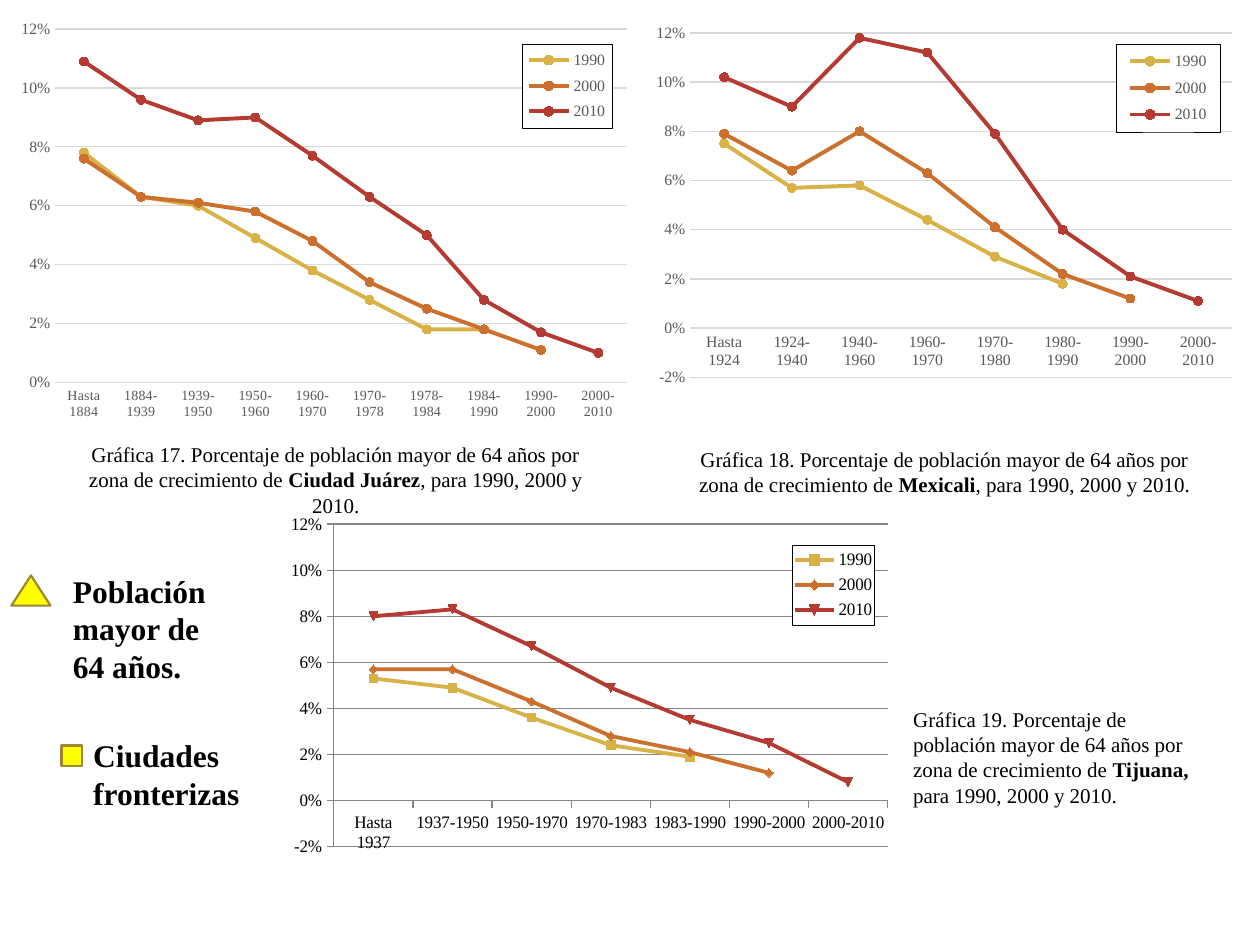
from pptx import Presentation
from pptx.chart.data import CategoryChartData
from pptx.dml.color import RGBColor
from pptx.enum.chart import XL_CHART_TYPE, XL_LEGEND_POSITION, XL_MARKER_STYLE, XL_TICK_MARK
from pptx.enum.shapes import MSO_SHAPE
from pptx.enum.text import MSO_AUTO_SIZE, PP_ALIGN
from pptx.oxml import parse_xml
from pptx.oxml.ns import nsdecls, qn
from pptx.util import Cm, Pt

LINE_MARKERS = XL_CHART_TYPE.LINE_MARKERS
LEGEND_RIGHT = XL_LEGEND_POSITION.RIGHT
CIRCLE = XL_MARKER_STYLE.CIRCLE
NO_TICK, OUTER_TICK = XL_TICK_MARK.NONE, XL_TICK_MARK.OUTSIDE
TRIANGLE, SQUARE = MSO_SHAPE.ISOSCELES_TRIANGLE, MSO_SHAPE.RECTANGLE
CENTER, LEFT = PP_ALIGN.CENTER, PP_ALIGN.LEFT
GROW = MSO_AUTO_SIZE.SHAPE_TO_FIT_TEXT

BLACK = RGBColor(0x00, 0x00, 0x00)
YELLOW = RGBColor(0xFF, 0xFF, 0x00)
BRONZE = RGBColor(0xA1, 0x84, 0x35)
LABEL_GRAY = RGBColor(0x59, 0x59, 0x59)
PALE_GRAY = RGBColor(0xD9, 0xD9, 0xD9)
MID_GRAY = RGBColor(0x86, 0x86, 0x86)
CENSUS_COLORS = {
    "1990": RGBColor(0xD9, 0xB2, 0x47),
    "2000": RGBColor(0xCC, 0x70, 0x2D),
    "2010": RGBColor(0xB5, 0x3A, 0x31),
}
FONT = "Times New Roman"

MODERN = {"label": LABEL_GRAY, "grid": PALE_GRAY, "tick": NO_TICK,
          "size": 9, "circles": True}
CLASSIC = {"label": BLACK, "grid": MID_GRAY, "tick": OUTER_TICK,
           "size": 10, "circles": False}

JUAREZ = {
    "box": (0.23, 0.23, 12.65, 8.53), "style": MODERN, "category_size": 8, "minimum": 0,
    "plot": (0.07, 0.042, 0.911, 0.835), "legend": (0.814, 0.077, 0.143, 0.198),
    "zones": ["Hasta 1884", "1884-1939", "1939-1950", "1950-1960", "1960-1970",
              "1970-1978", "1978-1984", "1984-1990", "1990-2000", "2000-2010"],
    "shares": [
        (0.078, 0.063, 0.06, 0.049, 0.038, 0.028, 0.018, 0.018, None, None),
        (0.076, 0.063, 0.061, 0.058, 0.048, 0.034, 0.025, 0.018, 0.011, None),
        (0.109, 0.096, 0.089, 0.09, 0.077, 0.063, 0.05, 0.028, 0.017, 0.01)],
}
MEXICALI = {
    "box": (12.88, 0.23, 12.34, 8.53), "style": MODERN, "category_size": 9, "minimum": -0.02,
    "plot": (0.084, 0.051, 0.885, 0.814), "legend": (0.78, 0.077, 0.17, 0.208),
    "zones": ["Hasta 1924", "1924-1940", "1940-1960", "1960-1970",
              "1970-1980", "1980-1990", "1990-2000", "2000-2010"],
    "shares": [
        (0.075, 0.057, 0.058, 0.044, 0.029, 0.018, None, None),
        (0.079, 0.064, 0.08, 0.063, 0.041, 0.022, 0.012, None),
        (0.102, 0.09, 0.118, 0.112, 0.079, 0.04, 0.021, 0.011)],
}
TIJUANA = {
    "box": (5.87, 10.31, 12.29, 7.34), "style": CLASSIC, "category_size": 10, "minimum": -0.02,
    "plot": (0.047, 0.035, 0.931, 0.886), "legend": (0.818, 0.092, 0.138, 0.22),
    "zones": ["Hasta 1937", "1937-1950", "1950-1970", "1970-1983",
              "1983-1990", "1990-2000", "2000-2010"],
    "shares": [
        (0.053, 0.049, 0.036, 0.024, 0.019, None, None),
        (0.057, 0.057, 0.043, 0.028, 0.021, 0.012, None),
        (0.08, 0.083, 0.067, 0.049, 0.035, 0.025, 0.008)],
}


def apply_format(target, values):
    for attribute, value in values.items():
        setattr(target, attribute, value)


def format_font(font, size, color, bold=False):
    apply_format(font, {"name": FONT, "size": Pt(size), "bold": bold})
    font.color.rgb = color


def format_line(line, color, width):
    line.color.rgb = color
    line.width = Pt(width)


def manual_layout(box, inner=False):
    target = '<c:layoutTarget val="inner"/>' if inner else ""
    sizes = "".join(f'<c:{tag} val="{value}"/>' for tag, value in zip("xywh", box))
    return parse_xml(
        f'<c:layout {nsdecls("c")}><c:manualLayout>{target}'
        f'<c:xMode val="edge"/><c:yMode val="edge"/>{sizes}</c:manualLayout></c:layout>')


def white_panel(outline):
    return parse_xml(
        f'<c:spPr {nsdecls("c", "a")}><a:solidFill><a:srgbClr val="FFFFFF"/></a:solidFill>'
        f'<a:ln w="3175">{outline}</a:ln></c:spPr>')


def format_axis(axis, style, size):
    apply_format(axis, {"major_tick_mark": style["tick"], "minor_tick_mark": NO_TICK})
    format_font(axis.tick_labels.font, size, style["label"])
    format_line(axis.format.line, style["grid"], 0.75)


def format_legend(chart, box, style):
    chart.has_legend = True
    legend = chart.legend
    apply_format(legend, {"position": LEGEND_RIGHT, "include_in_layout": True})
    format_font(legend.font, style["size"], style["label"])
    element = legend._element
    for layout in element.findall(qn("c:layout")):
        element.remove(layout)
    element.find(qn("c:legendPos")).addnext(manual_layout(box))
    black_outline = '<a:solidFill><a:srgbClr val="000000"/></a:solidFill>'
    element.find(qn("c:txPr")).addprevious(white_panel(black_outline))


def format_series(series, style):
    color = CENSUS_COLORS[series.name]
    series.smooth = False
    format_line(series.format.line, color, 2.25)
    if style["circles"]:
        apply_format(series.marker, {"style": CIRCLE, "size": 5})
        series.marker.format.fill.solid()
        series.marker.format.fill.fore_color.rgb = color
        format_line(series.marker.format.line, color, 0.75)


def add_city_chart(slide, city):
    style = city["style"]
    data = CategoryChartData(number_format="0%")
    data.categories = city["zones"]
    for census, shares in zip(CENSUS_COLORS, city["shares"]):
        data.add_series(census, shares)
    chart = slide.shapes.add_chart(LINE_MARKERS, *map(Cm, city["box"]), data).chart
    chart.has_title = False
    format_font(chart.font, 10, BLACK)
    space = chart._chartSpace
    space.find(qn("c:txPr")).addprevious(white_panel("<a:noFill/>"))

    plot_area = space.chart.plotArea
    for layout in plot_area.findall(qn("c:layout")):
        plot_area.remove(layout)
    plot_area.insert(0, manual_layout(city["plot"], inner=True))
    chart.plots[0].vary_by_categories = False

    format_axis(chart.category_axis, style, city["category_size"])
    shares_axis = chart.value_axis
    format_axis(shares_axis, style, style["size"])
    apply_format(shares_axis, {"minimum_scale": city["minimum"], "maximum_scale": 0.12,
                               "major_unit": 0.02, "has_major_gridlines": True})
    apply_format(shares_axis.tick_labels, {"number_format": "0%",
                                           "number_format_is_linked": False})
    format_line(shares_axis.major_gridlines.format.line, style["grid"], 0.75)
    if style["circles"]:
        shares_axis.format.line.fill.background()
    for series in chart.plots[0].series:
        format_series(series, style)
    format_legend(chart, city["legend"], style)


def add_text(slide, box, runs, size, align=LEFT):
    frame = slide.shapes.add_textbox(*map(Cm, box)).text_frame
    apply_format(frame, {"word_wrap": True, "auto_size": GROW})
    paragraph = frame.paragraphs[0]
    paragraph.alignment = align
    for text, bold in runs:
        run = paragraph.add_run()
        run.text = text
        format_font(run.font, size, BLACK, bold)


def add_caption(slide, box, number, city, ending, align):
    opening = (f"Gráfica {number}. Porcentaje de población mayor de 64 años "
               "por zona de crecimiento de ")
    add_text(slide, box, [(opening, False), (city, True), (ending, False)], 12, align)


def add_bullet_mark(slide, outline, box):
    mark = slide.shapes.add_shape(outline, *map(Cm, box))
    mark.shadow.inherit = False
    mark.fill.solid()
    mark.fill.fore_color.rgb = YELLOW
    format_line(mark.line, BRONZE, 1.25)


def main():
    deck = Presentation()
    apply_format(deck, {"slide_width": Cm(25.4), "slide_height": Cm(19.05)})
    slide = deck.slides.add_slide(deck.slide_layouts[6])

    add_bullet_mark(slide, TRIANGLE, (0.23, 11.6, 0.79, 0.61))
    add_text(slide, (1.22, 11.4, 3.76, 2.57), [("Población mayor de 64 años.", True)], 18)
    add_text(slide, (1.63, 14.72, 3.68, 1.8), [("Ciudades fronterizas", True)], 18)
    add_bullet_mark(slide, SQUARE, (1.24, 15.03, 0.41, 0.41))

    for city in (JUAREZ, MEXICALI, TIJUANA):
        add_city_chart(slide, city)

    add_caption(slide, (1.22, 8.78, 11.1, 1.27), 17, "Ciudad Juárez",
                ", para 1990, 2000 y 2010.", CENTER)
    add_caption(slide, (13.62, 8.88, 10.85, 1.27), 18, "Mexicali",
                ", para 1990, 2000 y 2010.", CENTER)
    add_caption(slide, (18.16, 14.12, 6.25, 2.31), 19, "Tijuana, ",
                "para 1990, 2000 y 2010.", LEFT)
    deck.save("out.pptx")


if __name__ == "__main__":
    main()
